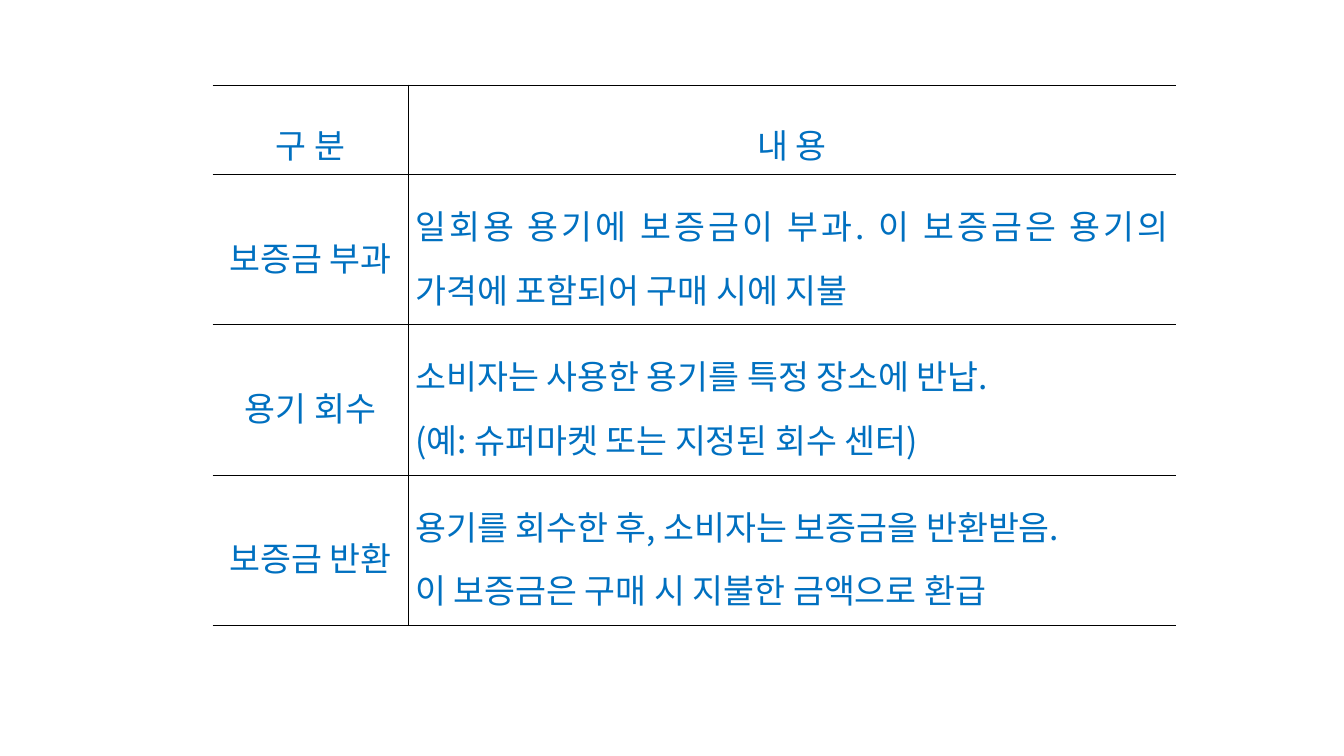
from lxml import etree
from pptx import Presentation
from pptx.dml.color import RGBColor
from pptx.enum.text import MSO_ANCHOR, PP_ALIGN
from pptx.oxml.ns import qn
from pptx.util import Inches, Pt

CENTER, JUSTIFY = PP_ALIGN.CENTER, PP_ALIGN.JUSTIFY
MIDDLE = MSO_ANCHOR.MIDDLE
COLORS = {"text": "0070C0", "line": "000000"}
FONT = "Noto Sans CJK KR"
COLS = [1.94, 7.61]
ROWS = [0.89] + [1.49] * 3
HANGING = Inches(0.21)
CELL_FORMAT = {
    "vertical_anchor": MIDDLE,
    "margin_left": Inches(0.07),
    "margin_right": Inches(0.07),
    "margin_top": Inches(0.02),
    "margin_bottom": Inches(0.02),
}
TEXT = [
    ["구 분", "내 용"],
    ["보증금 부과",
     "일회용 용기에 보증금이 부과. 이 보증금은 용기의 가격에 포함되어 구매 시에 지불"],
    ["용기 회수",
     "소비자는 사용한 용기를 특정 장소에 반납.\n(예: 슈퍼마켓 또는 지정된 회수 센터)"],
    ["보증금 반환",
     "용기를 회수한 후, 소비자는 보증금을 반환받음.\n이 보증금은 구매 시 지불한 금액으로 환급"],
]


def set_borders(cell, visible):
    tcPr = cell._tc.get_or_add_tcPr()
    for i, side in enumerate("LRTB"):
        ln = etree.Element(qn(f"a:ln{side}"), w=str(Pt(0.28)))
        if side in visible:
            fill = etree.SubElement(ln, qn("a:solidFill"))
            etree.SubElement(fill, qn("a:srgbClr"), val=COLORS["line"])
        else:
            etree.SubElement(ln, qn("a:noFill"))
        tcPr.insert(i, ln)


def format_paragraph(p, header, align):
    p.alignment = align
    p.line_spacing = 1.6 if header else 1.3
    if header:
        pPr = p._p.get_or_add_pPr()
        pPr.set("marL", str(HANGING))
        pPr.set("indent", str(-HANGING))
    for r in p.runs:
        for name, value in {"name": FONT, "size": Pt(24), "bold": False}.items():
            setattr(r.font, name, value)
        r.font.color.rgb = RGBColor.from_string(COLORS["text"])
        etree.SubElement(r._r.get_or_add_rPr(), qn("a:ea"), typeface=FONT)


prs = Presentation()
prs.slide_width, prs.slide_height = Inches(13.33), Inches(7.5)
s = prs.slides.add_slide(prs.slide_layouts[6])

table = s.shapes.add_table(
    len(ROWS), len(COLS), Inches(2.11), Inches(0.84),
    Inches(sum(COLS)), Inches(sum(ROWS))).table
table.first_row = table.horz_banding = False
for column, width in zip(table.columns, COLS):
    column.width = Inches(width)
for row, height in zip(table.rows, ROWS):
    row.height = Inches(height)

for i, row in enumerate(TEXT):
    for j, text in enumerate(row):
        cell = table.cell(i, j)
        for name, value in CELL_FORMAT.items():
            setattr(cell, name, value)
        cell.fill.background()
        set_borders(cell, "RTB" if j == 0 else "LTB")
        cell.text = text
        for p in cell.text_frame.paragraphs:
            format_paragraph(p, i == 0, JUSTIFY if i and j else CENTER)

prs.save("out.pptx")
